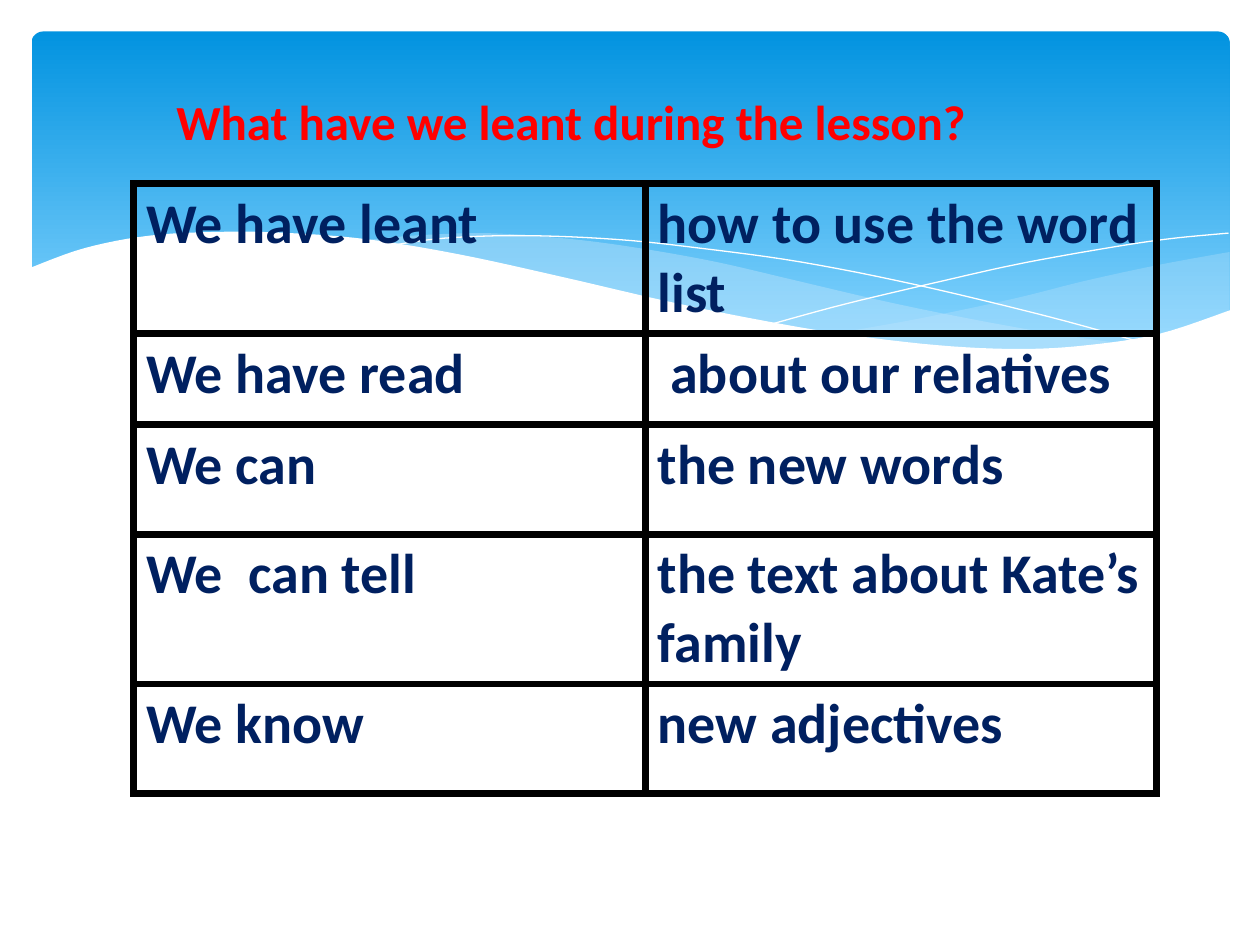
from lxml import etree
from pptx import Presentation
from pptx.dml.color import RGBColor
from pptx.enum.shapes import MSO_SHAPE
from pptx.enum.text import MSO_ANCHOR, MSO_AUTO_SIZE, PP_ALIGN
from pptx.oxml.ns import qn
from pptx.util import Inches, Pt

ROUNDED = MSO_SHAPE.ROUNDED_RECTANGLE
LEFT = PP_ALIGN.LEFT
TOP = MSO_ANCHOR.TOP
GROW = MSO_AUTO_SIZE.SHAPE_TO_FIT_TEXT

THEME = {
    "font": "Calibri",
    "title_size": 28,
    "cell_size": 32,
    "title": RGBColor.from_string("FF0000"),
    "cell": RGBColor.from_string("002060"),
    "border": RGBColor.from_string("000000"),
    "banner_top": RGBColor.from_string("0293E0"),
    "banner_bottom": RGBColor.from_string("83D3FE"),
    "wave": RGBColor.from_string("C6E7FC"),
    "white": RGBColor.from_string("FFFFFF"),
}
BORDER_WIDTH = Pt(4.5)
CURVE_STEPS = 6


def write_text(frame, text, size, color, bold=True):
    paragraph = frame.paragraphs[0]
    paragraph.alignment = LEFT
    run = paragraph.add_run()
    run.text = text
    run.font.name = THEME["font"]
    run.font.size = Pt(size)
    run.font.bold = bold
    run.font.color.rgb = color


def smooth_curve(knots):
    padded = [knots[0], *knots, knots[-1]]
    points = [knots[0]]
    for before, start, end, after in zip(padded, padded[1:], padded[2:], padded[3:]):
        for step in range(1, CURVE_STEPS + 1):
            t = step / CURVE_STEPS
            points.append(tuple(
                b + t * (c - a) / 2
                + t**2 * (a - 2.5 * b + 2 * c - d / 2)
                + t**3 * (1.5 * (b - c) + (d - a) / 2)
                for a, b, c, d in zip(before, start, end, after)
            ))
    return [(Inches(x), Inches(y)) for x, y in points]


presentation = Presentation()
presentation.slide_width = Inches(10)
presentation.slide_height = Inches(7.5)
slide = presentation.slides.add_slide(presentation.slide_layouts[5])
shapes = slide.shapes

banner = shapes.add_shape(ROUNDED, Inches(0.25), Inches(0.25), Inches(9.51), Inches(2.7))
banner.adjustments[0] = 0.034
banner.shadow.inherit = False
banner.line.fill.background()
banner.fill.gradient()
banner.fill.gradient_angle = 270
banner_stops = [(0, THEME["banner_top"]), (0.9, THEME["banner_bottom"])]
for stop, (position, color) in zip(banner.fill.gradient_stops, banner_stops):
    stop.position = position
    stop.color.rgb = color

right_wave_top = [
    (9.76, 2), (9.21, 2.1), (8.61, 2.23), (8.05, 2.37), (7.29, 2.53), (6.61, 2.65),
]
right_wave_bottom = [
    (6.61, 2.65), (7.19, 2.72), (7.69, 2.77), (8.14, 2.78), (8.63, 2.75),
    (9.13, 2.67), (9.76, 2.47),
]
middle_wave_top = [
    (8.93, 2.73), (8.37, 2.65), (7.75, 2.54), (7.06, 2.4), (6.29, 2.22), (5.69, 2.08),
    (5.14, 1.98), (4.65, 1.91), (4.2, 1.87), (3.8, 1.85), (3.28, 1.87), (2.86, 1.91),
]
middle_wave_bottom = [
    (2.86, 1.91), (3.62, 2.03), (4.49, 2.22), (5.3, 2.4), (6.01, 2.55), (6.65, 2.66),
    (7.22, 2.74), (7.73, 2.77), (8.28, 2.78), (8.93, 2.73),
]
falling_line = [
    (3.09, 1.95), (3.53, 1.89), (4.16, 1.87), (4.89, 1.9), (5.56, 1.97), (6.36, 2.08),
    (7.27, 2.26), (8.31, 2.51), (9.07, 2.72),
]
rising_line = [
    (6.13, 2.57), (6.72, 2.41), (7.48, 2.23), (8.06, 2.1), (8.66, 1.99), (9.24, 1.9),
    (9.75, 1.85),
]
white_crest = [
    (9.77, 2.46), (9.2, 2.65), (8.63, 2.74), (8.09, 2.77), (7.44, 2.74), (6.68, 2.65),
    (6.03, 2.54), (5.29, 2.39), (4.47, 2.2), (3.65, 2.02), (2.92, 1.9), (2.3, 1.85),
    (1.77, 1.84), (1.19, 1.87), (0.67, 1.97), (0.23, 2.13),
]
white_base = [(0.23, 3.29), (9.77, 3.29)]

filled_waves = [
    (right_wave_top, right_wave_bottom, THEME["wave"], 29),
    (middle_wave_top, middle_wave_bottom, THEME["wave"], 40),
]
white_lines = [falling_line, rising_line]
white_cover = (white_crest, white_base, THEME["white"], 100)

for upper, lower, color, opacity in [*filled_waves, white_cover]:
    outline = smooth_curve(upper) + smooth_curve(lower)
    builder = shapes.build_freeform(*outline[0])
    builder.add_line_segments(outline[1:], close=True)
    wave = builder.convert_to_shape()
    wave.shadow.inherit = False
    wave.line.fill.background()
    wave.fill.solid()
    wave.fill.fore_color.rgb = color
    fill_color = wave._element.spPr.find(qn("a:solidFill"))[0]
    etree.SubElement(fill_color, qn("a:alpha"), val=str(opacity * 1000))

for knots in white_lines:
    points = smooth_curve(knots)
    builder = shapes.build_freeform(*points[0])
    builder.add_line_segments(points[1:], close=False)
    line = builder.convert_to_shape()
    line.shadow.inherit = False
    line.fill.background()
    line.line.color.rgb = THEME["white"]
    line.line.width = Pt(0)

SINGLE_LINE, MEDIUM, TWO_LINES = 0.72, 0.87, 1.19
lesson_rows = [
    ("We have leant", "how to use the word list", TWO_LINES),
    ("We have read", " about our relatives", SINGLE_LINE),
    ("We can", "the new words", MEDIUM),
    ("We  can tell", "the text about Kate’s family", TWO_LINES),
    ("We know", "new adjectives", MEDIUM),
]
column_width = 4.06
table_height = sum(height for *texts, height in lesson_rows)
table = shapes.add_table(
    len(lesson_rows), 2,
    Inches(1.06), Inches(1.46), Inches(2 * column_width), Inches(table_height),
).table
table.first_row = False
table.horz_banding = False
for column in table.columns:
    column.width = Inches(column_width)
for row, (*texts, height) in zip(table.rows, lesson_rows):
    row.height = Inches(height)
    for cell, text in zip(row.cells, texts):
        properties = cell._tc.get_or_add_tcPr()
        for side in ("a:lnL", "a:lnR", "a:lnT", "a:lnB"):
            border = etree.SubElement(properties, qn(side), w=str(BORDER_WIDTH))
            solid = etree.SubElement(border, qn("a:solidFill"))
            etree.SubElement(solid, qn("a:srgbClr"), val=str(THEME["border"]))
        cell.fill.background()
        write_text(cell.text_frame, text, size=THEME["cell_size"], color=THEME["cell"])

title = shapes.title
title.left, title.top = Inches(1.3), Inches(0.68)
title.width, title.height = Inches(7.17), Inches(0.57)
title_frame = title.text_frame
title_frame.word_wrap = True
title_frame.auto_size = GROW
title_frame.vertical_anchor = TOP
write_text(
    title_frame,
    "What have we leant during the lesson?",
    size=THEME["title_size"],
    color=THEME["title"],
)
shapes._spTree.append(title._element)

presentation.save("out.pptx")
